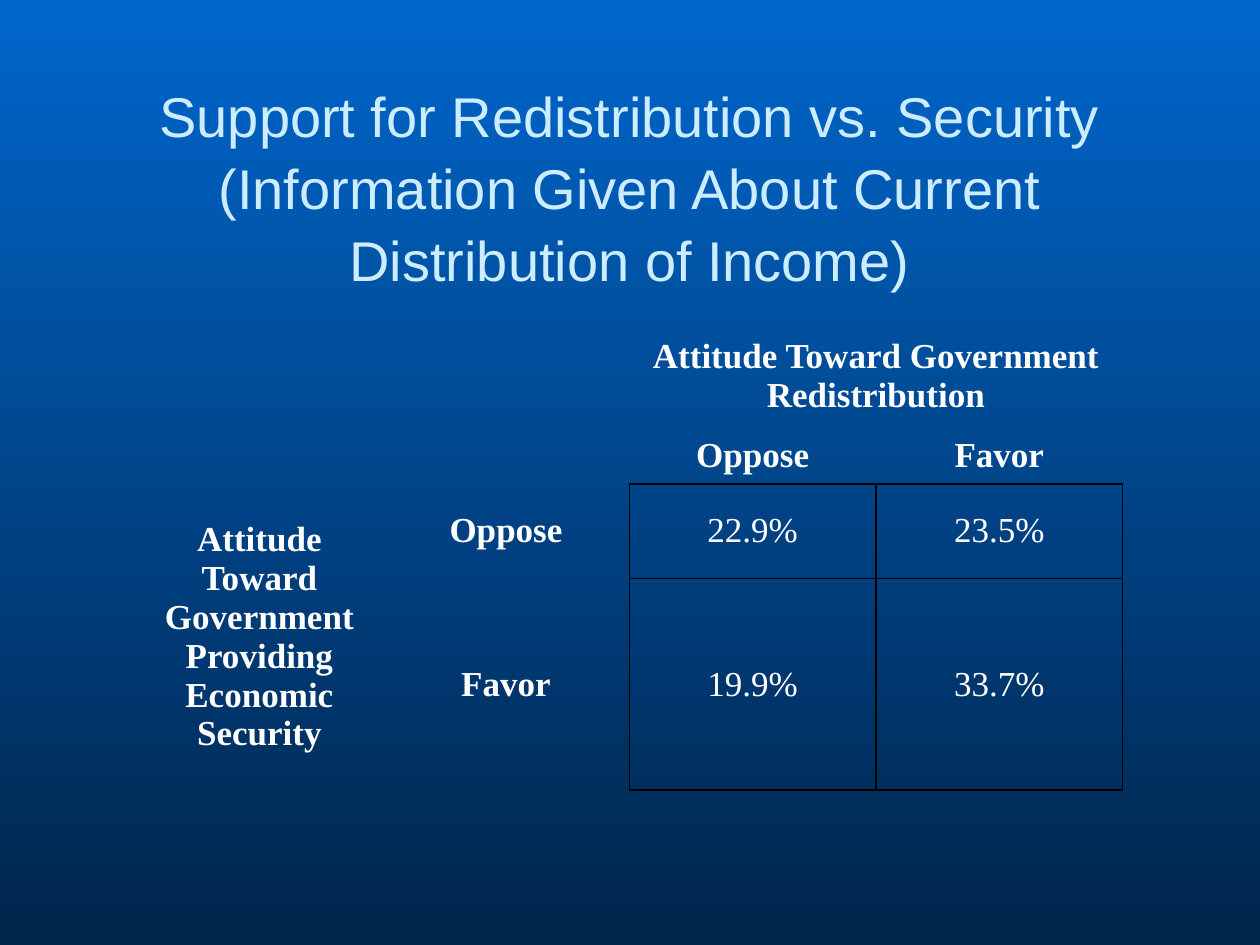
from lxml import etree
from pptx import Presentation
from pptx.dml.color import RGBColor
from pptx.enum.text import MSO_ANCHOR, MSO_AUTO_SIZE, PP_ALIGN
from pptx.oxml.ns import qn
from pptx.util import Inches, Pt

MIDDLE = MSO_ANCHOR.MIDDLE
CENTER = PP_ALIGN.CENTER
NO_AUTOFIT = MSO_AUTO_SIZE.NONE

SKY_BLUE = RGBColor(0x00, 0x66, 0xCC)
NIGHT_BLUE = RGBColor(0x00, 0x25, 0x4A)
PALE_BLUE = RGBColor(0xCC, 0xEC, 0xFF)
WHITE = RGBColor(0xFF, 0xFF, 0xFF)
BLACK = RGBColor(0x00, 0x00, 0x00)

TITLE = ("Support for Redistribution vs. Security "
         "(Information Given About Current Distribution of Income)")
ROWS = [
    ["", "", "Attitude Toward Government Redistribution", ""],
    ["", "", "Oppose", "Favor"],
    ["Attitude Toward Government Providing Economic Security",
     "Oppose", "22.9%", "23.5%"],
    ["", "Favor", "19.9%", "33.7%"],
]
MERGES = [((0, 0), (1, 1)), ((0, 2), (0, 3)), ((2, 0), (3, 0))]
FIRST_VALUE_ROW = FIRST_VALUE_COLUMN = 2
ROW_HEIGHTS = [0.81, 0.45, 0.75, 1.68]
TABLE_LEFT, TABLE_TOP, TABLE_WIDTH = 1.08, 2.58, 7.83
NO_STYLE_NO_GRID = "{2D5ABB26-0587-4C30-8999-92F81FD0307C}"


def paint_background(slide):
    fill = slide.background.fill
    fill.gradient()
    fill.gradient_angle = 270
    for stop, color in zip(fill.gradient_stops, (SKY_BLUE, NIGHT_BLUE)):
        stop.color.rgb = color


def add_title(slide):
    title = slide.shapes.title
    title.left, title.top = Inches(0.5), Inches(0.84)
    title.width, title.height = Inches(9), Inches(1.25)
    frame = title.text_frame
    frame.text = TITLE
    frame.word_wrap = True
    frame.auto_size = NO_AUTOFIT
    frame.vertical_anchor = MIDDLE
    paragraph = frame.paragraphs[0]
    paragraph.alignment = CENTER
    paragraph.line_spacing = 1.07
    paragraph.font.name = "Arial"
    paragraph.font.size = Pt(32)
    paragraph.font.color.rgb = PALE_BLUE


def outline_cell(cell):
    """Draw a thin black border on all four sides of a cell."""
    properties = cell._tc.get_or_add_tcPr()
    for index, side in enumerate(("a:lnL", "a:lnR", "a:lnT", "a:lnB")):
        line = etree.Element(qn(side), w=str(Pt(1)))
        fill = etree.SubElement(line, qn("a:solidFill"))
        etree.SubElement(fill, qn("a:srgbClr"), val=str(BLACK))
        properties.insert(index, line)


def format_cell(cell, text, is_value):
    cell.fill.background()
    cell.vertical_anchor = MIDDLE
    cell.margin_left = cell.margin_right = Inches(0.07)
    cell.margin_top = cell.margin_bottom = 0
    cell.text = text
    paragraph = cell.text_frame.paragraphs[0]
    paragraph.alignment = CENTER
    paragraph.font.name = "Times New Roman"
    paragraph.font.size = Pt(20)
    paragraph.font.bold = not is_value
    paragraph.font.color.rgb = WHITE
    if is_value:
        outline_cell(cell)


def add_attitude_table(slide):
    frame = slide.shapes.add_table(
        len(ROWS), len(ROWS[0]), Inches(TABLE_LEFT), Inches(TABLE_TOP),
        Inches(TABLE_WIDTH), Inches(sum(ROW_HEIGHTS)))
    table = frame.table
    table.first_row = table.horz_banding = False
    table._tbl.tblPr.find(qn("a:tableStyleId")).text = NO_STYLE_NO_GRID
    for row, height in zip(table.rows, ROW_HEIGHTS):
        row.height = Inches(height)
    for r, texts in enumerate(ROWS):
        for c, text in enumerate(texts):
            is_value = r >= FIRST_VALUE_ROW and c >= FIRST_VALUE_COLUMN
            format_cell(table.cell(r, c), text, is_value)
    for first, last in MERGES:
        table.cell(*first).merge(table.cell(*last))


def main():
    presentation = Presentation()
    presentation.slide_width = Inches(10)
    presentation.slide_height = Inches(7.5)
    title_only = presentation.slide_layouts[5]
    slide = presentation.slides.add_slide(title_only)
    paint_background(slide)
    add_title(slide)
    add_attitude_table(slide)
    presentation.save("out.pptx")


if __name__ == "__main__":
    main()
